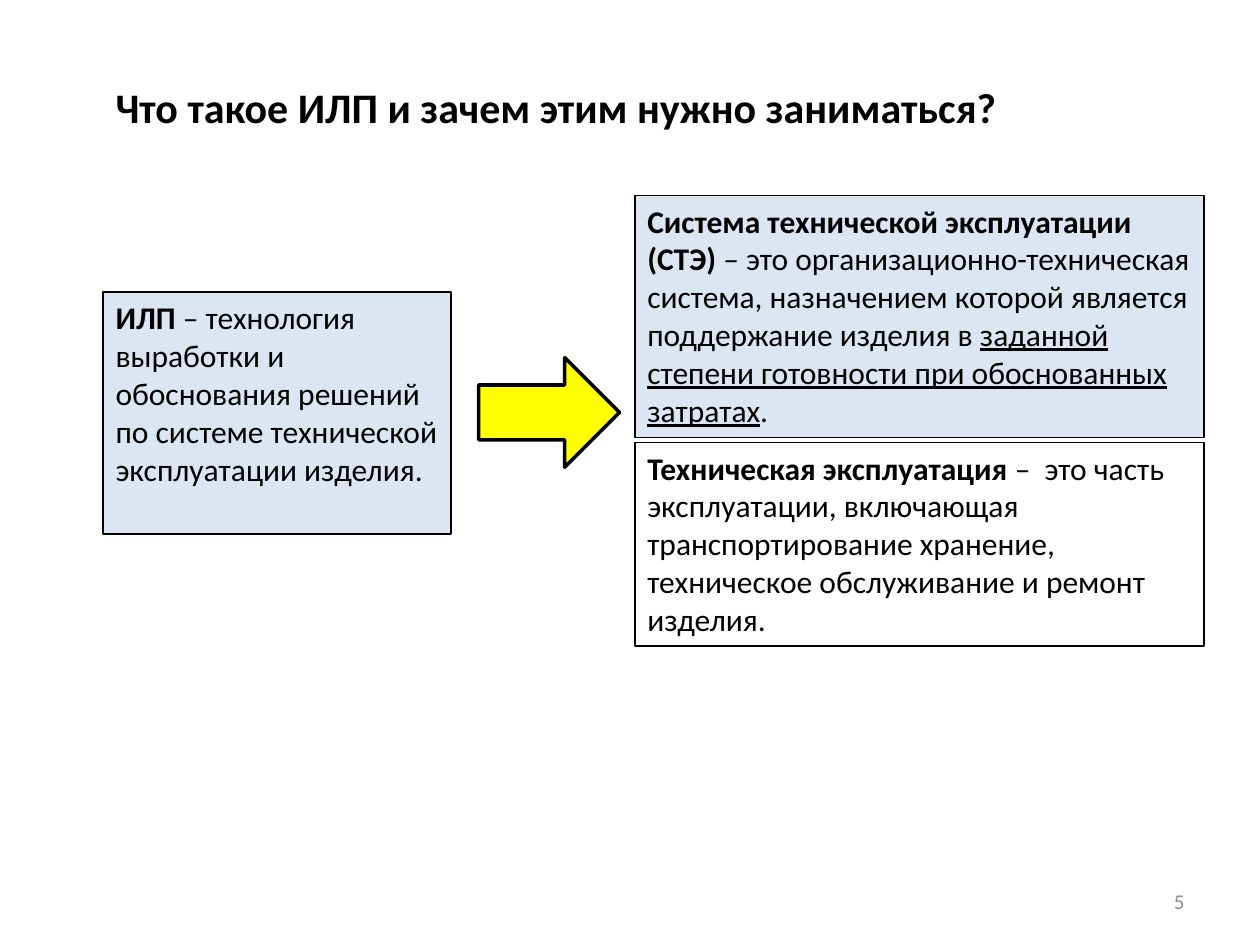
import dataclasses
import pptx
import pptx.dml.color
import pptx.enum.shapes
import pptx.enum.text
import pptx.util

Cm = pptx.util.Cm
Pt = pptx.util.Pt
Shape = pptx.enum.shapes.MSO_SHAPE
Align = pptx.enum.text.PP_ALIGN
Anchor = pptx.enum.text.MSO_ANCHOR


@dataclasses.dataclass(frozen=True)
class Theme:
    font: str = "Calibri"
    ink: str = "000000"
    pale: str = "DCE6F2"
    gold: str = "FFFF00"
    gray: str = "8C8C8C"
    head: int = 24
    body: int = 18
    foot: int = 12


class Deck:
    def __init__(self, slide, theme):
        self.slide = slide
        self.theme = theme

    def color(self, code):
        return pptx.dml.color.RGBColor.from_string(code)

    def words(self, frame, parts, size, ink, align=Align.LEFT, anchor=Anchor.TOP):
        frame.word_wrap = True
        frame.vertical_anchor = anchor
        para = frame.paragraphs[0]
        para.alignment = align
        para.font.name = self.theme.font
        para.font.size = Pt(size)
        para.font.color.rgb = self.color(ink)
        for text, style in parts:
            run = para.add_run()
            run.text = text
            if style == "bold":
                run.font.bold = True
            elif style == "under":
                run.font.underline = True

    def label(self, area, parts, size, ink, **place):
        box = self.slide.shapes.add_textbox(*map(Cm, area))
        self.words(box.text_frame, parts, size, ink, **place)

    def shape(self, kind, area, fill, width):
        item = self.slide.shapes.add_shape(kind, *map(Cm, area))
        item.shadow.inherit = False
        if fill:
            item.fill.solid()
            item.fill.fore_color.rgb = self.color(fill)
        else:
            item.fill.background()
        item.line.color.rgb = self.color(self.theme.ink)
        item.line.width = Pt(width)
        return item

    def panel(self, area, parts, fill=None):
        box = self.shape(Shape.RECTANGLE, area, fill, 1)
        self.words(box.text_frame, parts, self.theme.body, self.theme.ink)

    def arrow(self, area):
        self.shape(Shape.RIGHT_ARROW, area, self.theme.gold, 2)


def main():
    show = pptx.Presentation()
    show.slide_width, show.slide_height = Cm(25.4), Cm(19.05)
    theme = Theme()
    deck = Deck(show.slides.add_slide(show.slide_layouts[6]), theme)

    left, right = 2.08, 12.8
    wide, tall = 11.48, 4.88

    deck.panel((left, 5.89, 7.01, tall), [
        ("ИЛП", "bold"),
        (" – технология выработки и обоснования решений по системе "
         "технической эксплуатации изделия.", None),
    ], theme.pale)
    deck.panel((right, 8.92, wide, 4.11), [
        ("Техническая эксплуатация ", "bold"),
        ("–  это часть эксплуатации, включающая транспортирование хранение, "
         "техническое обслуживание и ремонт изделия.", None),
    ])
    deck.panel((right, 3.94, wide, tall), [
        ("Система технической эксплуатации (СТЭ) ", "bold"),
        ("– это организационно-техническая система, назначением которой "
         "является поддержание изделия в ", None),
        ("заданной степени готовности при обоснованных затратах", "under"),
        (".", None),
    ], theme.pale)
    deck.arrow((9.65, 7.21, 2.84, 2.21))
    deck.label((18.21, 17.65, 5.92, 1.02), [("5", None)], theme.foot, theme.gray,
               align=Align.RIGHT, anchor=Anchor.MIDDLE)
    deck.label((left, 1.52, 22.81, 1.27),
               [("Что такое ИЛП и зачем этим нужно заниматься?", "bold")],
               theme.head, theme.ink)
    show.save("out.pptx")


if __name__ == "__main__":
    main()
